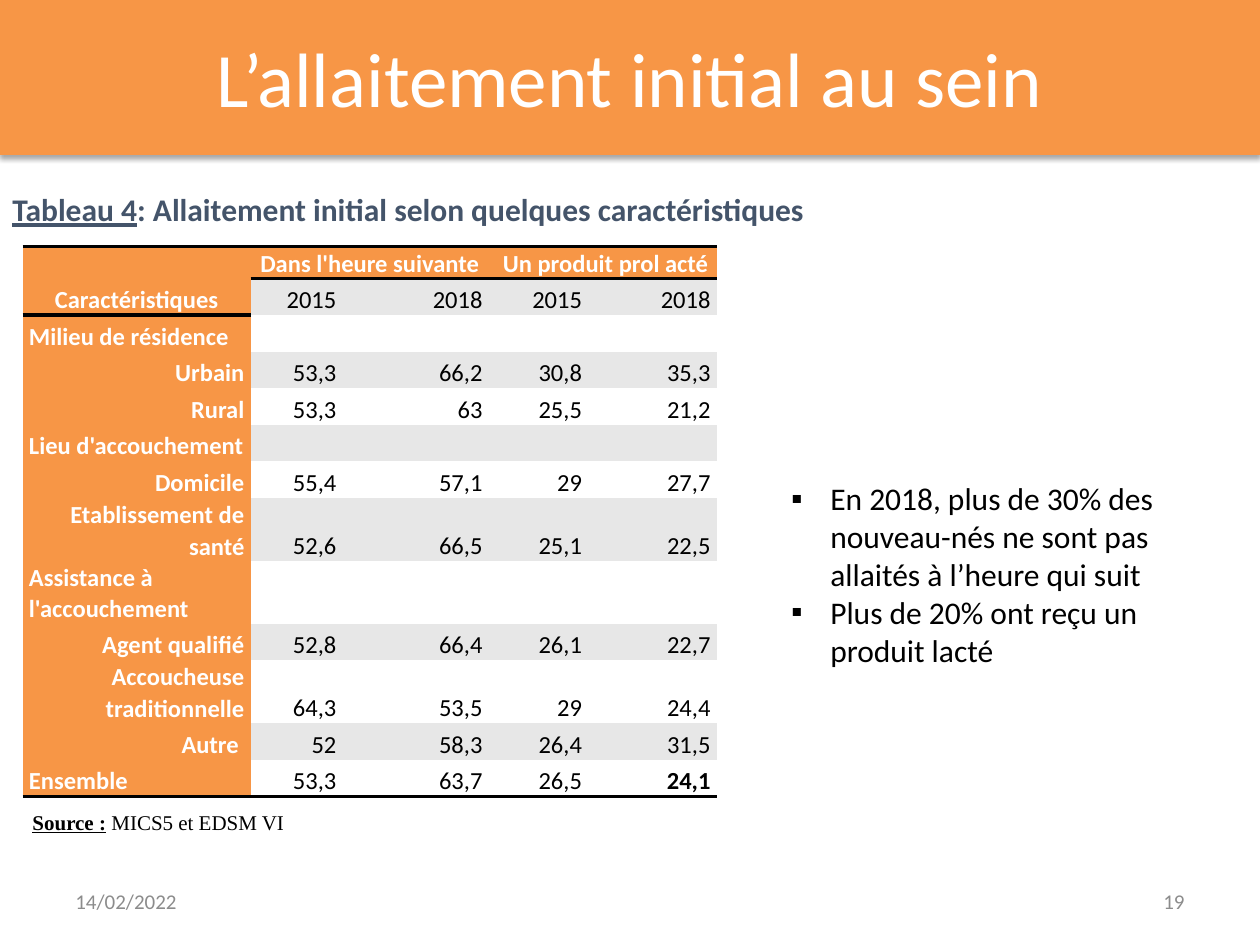
from lxml import etree
from pptx import Presentation
from pptx.dml import color
from pptx.enum import text
from pptx.oxml import ns
from pptx.util import Inches, Pt

ORANGE, GREY, WHITE, BLACK = "F79646", "E7E7E7", "FFFFFF", "000000"
SLATE, FAINT = "44546A", "8C8C8C"
LEFT, MID, RIGHT, EVEN = (text.PP_ALIGN.LEFT, text.PP_ALIGN.CENTER,
                          text.PP_ALIGN.RIGHT, text.PP_ALIGN.JUSTIFY)
NO_GRID = "{2D5ABB26-0587-4C30-8999-92F81FD0307C}"

# Group names have no values and stand to the left.
ROWS = [
    ("Milieu de résidence",),
    ("Urbain", "53,3", "66,2", "30,8", "35,3"),
    ("Rural", "53,3", "63", "25,5", "21,2"),
    ("Lieu d'accouchement",),
    ("Domicile", "55,4", "57,1", "29", "27,7"),
    ("Etablissement de santé", "52,6", "66,5", "25,1", "22,5"),
    ("Assistance à l'accouchement",),
    ("Agent qualifié", "52,8", "66,4", "26,1", "22,7"),
    ("Accoucheuse traditionnelle", "64,3", "53,5", "29", "24,4"),
    ("Autre ", "52", "58,3", "26,4", "31,5"),
    ("Ensemble", "53,3", "63,7", "26,5", "24,1"),
]


def rgb(code):
    return color.RGBColor.from_string(code)


def node(parent, tag, **attrs):
    return etree.SubElement(parent, ns.qn("a:" + tag), attrs)


def paint(item, code):
    item.fill.solid()
    item.fill.fore_color.rgb = rgb(code)


class Deck:
    """Slide style; places are percentages of the slide's width and height."""

    def __init__(self):
        self.prs = Presentation()
        self.prs.slide_width, self.prs.slide_height = Inches(10), Inches(7.5)
        self.slide = self.prs.slides.add_slide(self.prs.slide_layouts[1])

    def wide(self, share):
        return round(self.prs.slide_width * share / 100)

    def high(self, share):
        return round(self.prs.slide_height * share / 100)

    def area(self, x, y, w, h):
        return self.wide(x), self.high(y), self.wide(w), self.high(h)

    def move(self, item, place):
        item.left, item.top, item.width, item.height = self.area(*place)

    def run(self, para, words, size, code, bold=False, line=False,
            face="Calibri"):
        run = para.add_run()
        run.text = words
        font = run.font
        font.name, font.size, font.bold, font.underline = face, Pt(size), bold, line
        font.color.rgb = rgb(code)

    def title(self, place, words):
        head = self.slide.shapes.title
        self.move(head, place)
        paint(head, ORANGE)
        effect = node(head._element.spPr, "effectLst")
        shade = node(effect, "outerShdw", blurRad=str(Pt(3.1)),
                     dist=str(Pt(1.8)), dir="5400000", rotWithShape="0")
        node(node(shade, "srgbClr", val=BLACK), "alpha", val="35000")
        frame = head.text_frame
        frame.auto_size = text.MSO_AUTO_SIZE.NONE
        frame.vertical_anchor = text.MSO_ANCHOR.MIDDLE
        frame.paragraphs[0].alignment = MID
        self.run(frame.paragraphs[0], words, 44, WHITE)

    def points(self, place, items):
        body = self.slide.placeholders[1]
        self.move(body, place)
        frame = body.text_frame
        frame.auto_size = text.MSO_AUTO_SIZE.NONE
        frame.vertical_anchor = text.MSO_ANCHOR.MIDDLE
        for i, words in enumerate(items):
            para = frame.add_paragraph() if i else frame.paragraphs[0]
            para.space_before = Pt(0)
            props = para._p.get_or_add_pPr()
            props.set("marL", str(Inches(0.31)))
            props.set("indent", str(-Inches(0.31)))
            node(props, "buFont", typeface="Wingdings")[:] = []
            props[-1].set("typeface", "Calibri")
            node(props, "buChar", char="▪")
            self.run(para, words, 18, BLACK)

    def label(self, place, runs, align=LEFT, anchor=text.MSO_ANCHOR.TOP,
              after=0, ratio=1.0):
        """Text box; each run is given as the arguments of run()."""
        frame = self.slide.shapes.add_textbox(*self.area(*place)).text_frame
        frame.word_wrap = True
        frame.vertical_anchor = anchor
        para = frame.paragraphs[0]
        para.alignment, para.space_after = align, Pt(after)
        para.line_spacing = ratio
        for part in runs:
            self.run(para, *part)

    def cell(self, cell, words, align, fill, bold, edges):
        cell.margin_left = cell.margin_right = Inches(0.05)
        cell.margin_top = cell.margin_bottom = 0
        cell.vertical_anchor = text.MSO_ANCHOR.BOTTOM
        props = cell._tc.get_or_add_tcPr()
        for edge in edges:
            line = node(props, edge, w=str(Pt(2)))
            node(node(line, "solidFill"), "srgbClr", val=BLACK)
        paint(cell, fill)
        para = cell.text_frame.paragraphs[0]
        para.alignment, para.line_spacing = align, 1.07
        para.space_after = Pt(8)
        if words:
            self.run(para, words, 14, WHITE if fill == ORANGE else BLACK, bold)
        else:
            node(para._p, "endParaRPr", sz="1400")

    def table(self, place, cols, heads, years, rows):
        count = len(rows) + 2
        grid = self.slide.shapes.add_table(count, len(cols),
                                           *self.area(*place)).table
        grid.first_row = grid.horz_banding = False
        grid._tbl.tblPr.find(ns.qn("a:tableStyleId")).text = NO_GRID
        for col, share in zip(grid.columns, cols):
            col.width = self.wide(share)
        for r, row in enumerate(grid.rows):
            row.height = self.high(3.87 if r else 2.53)
        grid.cell(0, 0).merge(grid.cell(1, 0))
        for c in (1, 3):
            grid.cell(0, c).merge(grid.cell(0, c + 1))

        last = count - 1
        for r, row in enumerate([heads, years, *rows]):
            for c in range(len(cols)):
                words = row[c] if c < len(row) else ""
                head = r == 0 or c == 0
                fill = ORANGE if head else GREY if r % 2 else WHITE
                group = c == 0 and (len(row) == 1 or r == last)
                align = MID if r == 0 else LEFT if group else RIGHT
                edges = ["lnT"] if r == 0 else []
                if r in (0, last) or (r, c) == (1, 0):
                    edges.append("lnB")
                bold = head or (r, c) == (last, len(cols) - 1)
                self.cell(grid.cell(r, c), words, align, fill, bold, edges)


def main():
    deck = Deck()
    mid = text.MSO_ANCHOR.MIDDLE
    deck.title((0, -0.27, 100, 16.67), "L’allaitement initial au sein")
    deck.label((0, 19.47, 96.5, 5.33), [
        ("Tableau 4", 18, SLATE, True, True),
        (": Allaitement initial selon quelques caractéristiques", 18, SLATE, True),
    ], after=10)
    deck.table((1.8, 26.13, 55.1, 57.87), (18.1, 7.3, 11.6, 7.9, 10.2),
               ("Caractéristiques", "Dans l'heure suivante", "",
                " Un produit prol acté", ""),
               ("", "2015", "2018", "2015", "2018"), ROWS)
    deck.points((61.8, 29.07, 36.2, 63.33), [
        "En 2018, plus de 30% des nouveau-nés ne sont pas allaités à l’heure qui suit",
        "Plus de 20% ont reçu un produit lacté",
    ])
    deck.label((1.6, 84.8, 50.7, 4.13), [
        ("Source :", 12, BLACK, True, True, "Times New Roman"),
        (" MICS5 et EDSM VI", 12, BLACK, False, False, "Times New Roman"),
    ], EVEN, after=8, ratio=1.07)
    deck.label((5, 92.67, 23.3, 5.33), [("14/02/2022", 12, FAINT)], anchor=mid)
    deck.label((71.7, 92.67, 23.3, 5.33), [("19", 12, FAINT)], RIGHT, mid)
    deck.prs.save("out.pptx")


if __name__ == "__main__":
    main()
